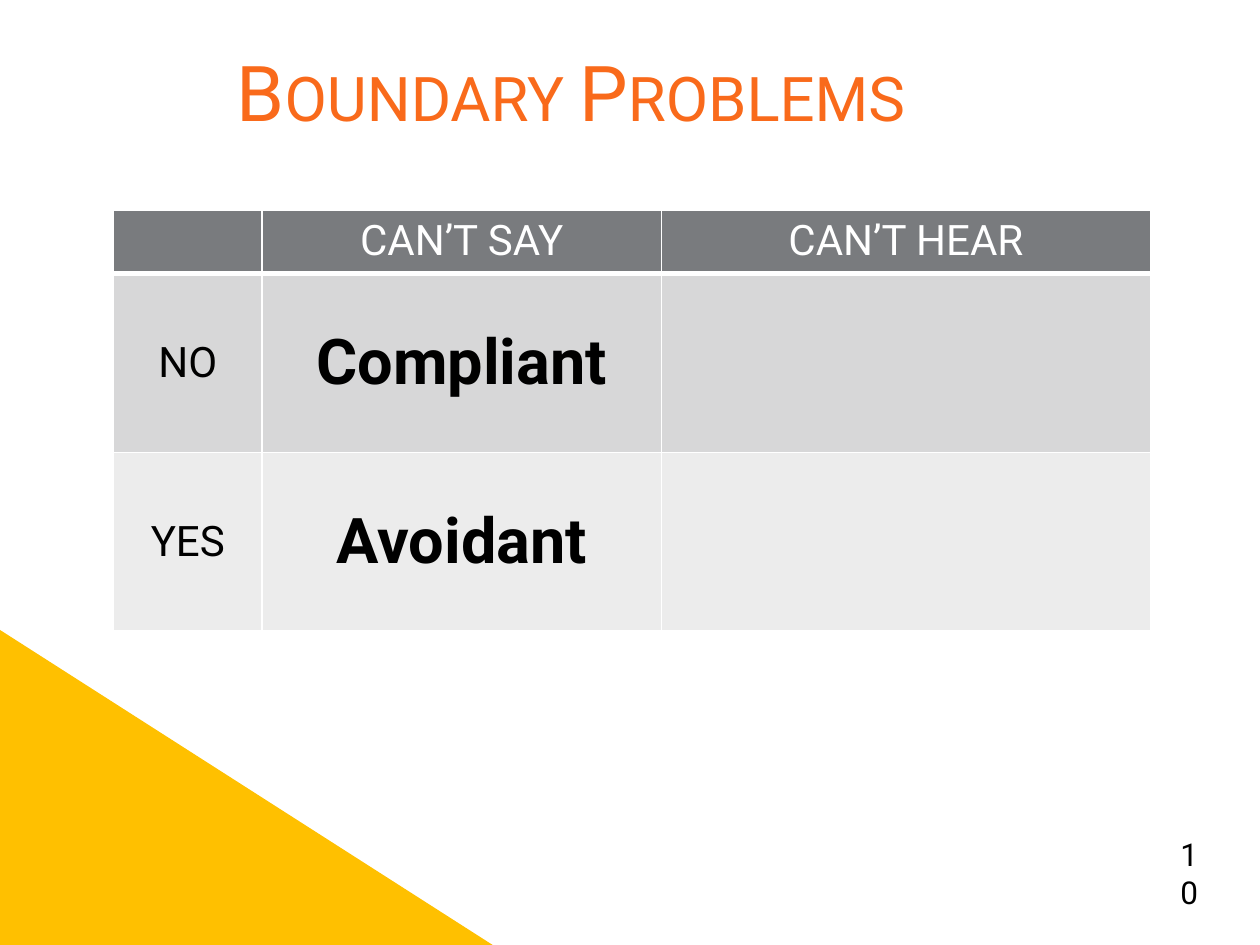
from lxml.etree import SubElement
from pptx import Presentation
from pptx.dml.color import RGBColor
from pptx.enum.shapes import MSO_SHAPE as Shape
from pptx.enum.text import MSO_ANCHOR as Anchor, PP_ALIGN as Align
from pptx.oxml.ns import qn
from pptx.util import Inches, Pt

TITLE = "Boundary Problems"
PAGE_NUMBER = "10"
ROWS = [
    ["", "CAN’T SAY", "CAN’T HEAR"],
    ["NO", "Compliant", ""],
    ["YES", "Avoidant", ""],
]
ROW_FILLS = ["797B7E", "D7D7D8", "ECECEC"]
ROW_HEIGHTS = [0.5, 1.42, 1.42]
COLUMN_WIDTHS = [1.18, 3.17, 3.88]


def color(value):
    return RGBColor.from_string(value)


def set_text(frame, text, size, ink, align=Align.CENTER, anchor=Anchor.MIDDLE, bold=False):
    frame.word_wrap = True
    frame.vertical_anchor = anchor
    para = frame.paragraphs[0]
    para.text = text
    para.alignment = align
    style(para.font, size, ink, bold)
    return para


def style(font, size, ink, bold=False):
    font.name, font.size, font.bold = "Roboto", Pt(size), bold
    font.color.rgb = color(ink)


def set_borders(cell, bottom):
    """Draw white cell borders; they must come before the cell fill."""
    props = cell._tc.get_or_add_tcPr()
    for side, points in (("L", 1), ("R", 1), ("T", 1), ("B", bottom)):
        line = SubElement(props, qn(f"a:ln{side}"), w=str(Pt(points)))
        fill = SubElement(line, qn("a:solidFill"))
        SubElement(fill, qn("a:srgbClr"), val="FFFFFF")


deck = Presentation()
deck.slide_width, deck.slide_height = Inches(10), Inches(7.5)
page = deck.slides.add_slide(deck.slide_layouts[6])

# Page number
badge = page.shapes.add_shape(Shape.OVAL, Inches(9.19), Inches(6.5), Inches(0.55), Inches(0.55))
badge.shadow.inherit = False
badge.fill.background()
badge.line.fill.background()
set_text(badge.text_frame, PAGE_NUMBER, 18, "000000", Align.LEFT, Anchor.TOP)

# Corner triangle
corner = page.shapes.add_shape(Shape.RIGHT_TRIANGLE, 0, Inches(5), Inches(3.91), Inches(2.5))
corner.shadow.inherit = False
corner.fill.solid()
corner.fill.fore_color.rgb = color("FFC000")
corner.line.fill.background()

# Title in small capitals
title = page.shapes.add_textbox(Inches(0.42), Inches(0.42), Inches(8.22), Inches(0.6))
heading = set_text(title.text_frame, TITLE, 44, "F96A1B")
span = heading.runs[0]
style(span.font, 44, "F96A1B")
span.font._element.set("cap", "small")

# Table
table = page.shapes.add_table(
    len(ROWS), len(COLUMN_WIDTHS), Inches(0.9), Inches(1.67),
    Inches(sum(COLUMN_WIDTHS)), Inches(sum(ROW_HEIGHTS))).table
for column, width in zip(table.columns, COLUMN_WIDTHS):
    column.width = Inches(width)
for r, (texts, height, fill) in enumerate(zip(ROWS, ROW_HEIGHTS, ROW_FILLS)):
    table.rows[r].height = Inches(height)
    header = r == 0
    for c, text in enumerate(texts):
        cell = table.cell(r, c)
        set_borders(cell, 3 if header else 1)
        cell.fill.solid()
        cell.fill.fore_color.rgb = color(fill)
        cell.vertical_anchor = Anchor.TOP if header else Anchor.MIDDLE
        para = cell.text_frame.paragraphs[0]
        para.text = text
        para.alignment = Align.CENTER
        answer = not header and c > 0
        style(para.font, 36 if answer else 24, "FFFFFF" if header else "000000", answer)

deck.save("out.pptx")
